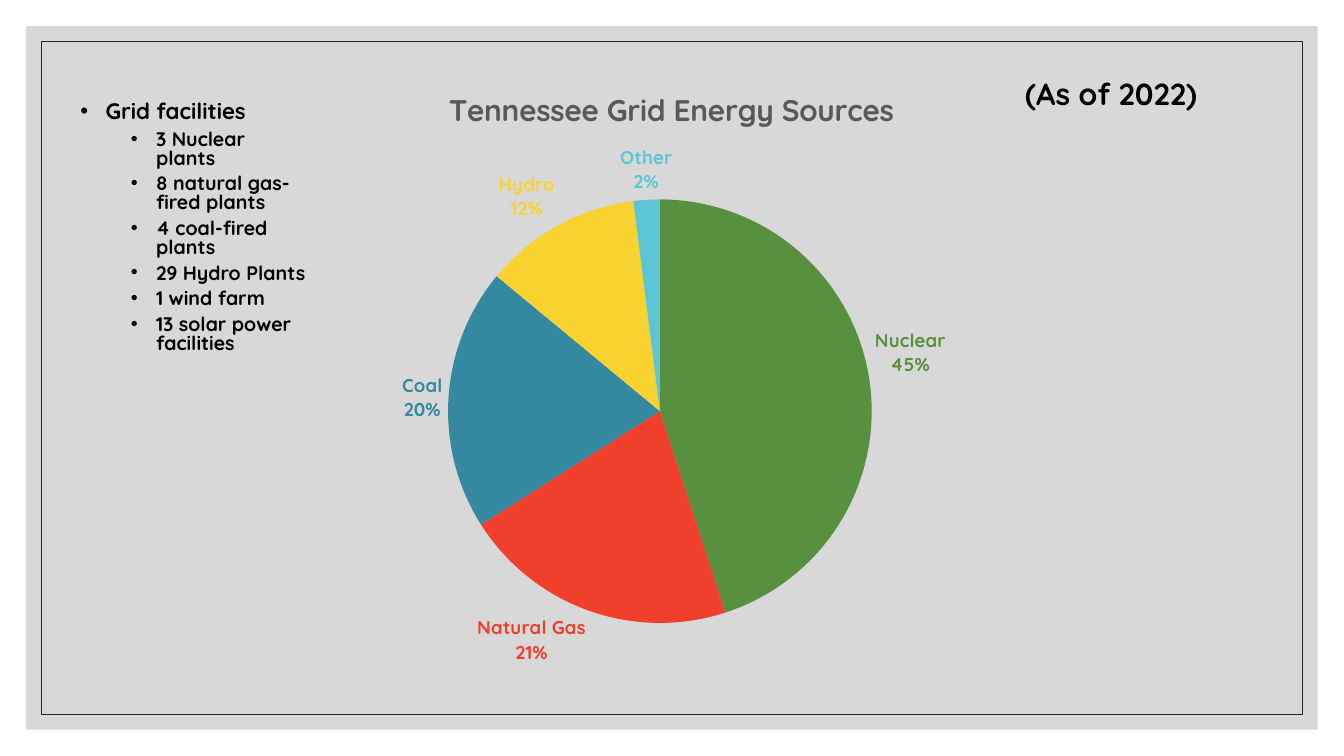
from dataclasses import dataclass

from lxml import etree
from pptx import Presentation
from pptx import util as u
from pptx.chart.data import CategoryChartData
from pptx.dml.color import RGBColor
from pptx.enum import chart as ch
from pptx.enum import shapes
from pptx.oxml import ns

FACE = "Quicksand"


@dataclass
class Source:
    name: str
    share: int
    color: str


@dataclass
class Line:
    text: str
    size: float
    level: int = 0
    left: float = 0
    hang: float = 0
    space: float = 0


SOURCES = [
    Source("Nuclear", 45, "57903F"),
    Source("Natural Gas", 21, "F03F2B"),
    Source("Coal", 20, "3488A0"),
    Source("Hydro", 12, "F8D22F"),
    Source("Other", 2, "5CC6D6"),
]
PLANTS = [
    "3 Nuclear plants",
    "8 natural gas-fired plants",
    "4 coal-fired plants",
    "29 Hydro Plants",
    "1 wind farm",
    "13 solar power facilities",
]


def rgb(code: str) -> RGBColor:
    return RGBColor.from_string(code)


def style(font, size: float, color: str = "000000") -> None:
    font.name, font.size, font.bold = FACE, u.Pt(size), True
    font.color.rgb = rgb(color)


def add(node, tag: str, **attrs: str):
    child = etree.SubElement(node, ns.qn(tag))
    for key, value in attrs.items():
        child.set(key, value)
    return child


def panel(slide, inset: float):
    """Add a bare rectangle inset equally from every slide edge."""
    box = slide.shapes.add_shape(
        shapes.MSO_SHAPE.RECTANGLE, u.Inches(inset), u.Inches(inset),
        u.Inches(13.33 - 2 * inset), u.Inches(7.5 - 2 * inset))
    box.shadow.inherit = False
    box.fill.background()
    box.line.fill.background()
    return box


def write(slide, at: tuple, lines: list[Line], pitch: float) -> None:
    frame = slide.shapes.add_textbox(*map(u.Inches, at)).text_frame
    frame.word_wrap = True
    for i, line in enumerate(lines):
        para = frame.paragraphs[0] if i == 0 else frame.add_paragraph()
        para.level, para.line_spacing = line.level, pitch
        if line.space:
            para.space_before = u.Pt(line.space)
        if line.hang:
            props = para._p.get_or_add_pPr()
            props.set("marL", str(u.Inches(line.left)))
            props.set("indent", str(-u.Inches(line.hang)))
            add(props, "a:buFont", typeface="Arial")
            add(props, "a:buChar", char="•")
        run = para.add_run()
        run.text = line.text
        style(run.font, line.size)


def place(node, index: int, **spots: float) -> None:
    """Give a chart part a manual layout, in fractions of the chart."""
    for old in node.findall(ns.qn("c:layout")):
        node.remove(old)
    layout = etree.Element(ns.qn("c:layout"))
    manual = add(layout, "c:manualLayout")
    if "w" in spots:
        add(manual, "c:layoutTarget", val="inner")
    add(manual, "c:xMode", val="edge")
    add(manual, "c:yMode", val="edge")
    for key, value in spots.items():
        add(manual, f"c:{key}", val=str(value))
    node.insert(index, layout)


def show(labels) -> None:
    """Show category and percent on two lines."""
    for tag, value in (("Val", "0"), ("CatName", "1"), ("Percent", "1")):
        labels.find(ns.qn(f"c:show{tag}")).set("val", value)
    mark = etree.Element(ns.qn("c:separator"))
    mark.text = "\n"
    last = labels.find(ns.qn("c:showBubbleSize"))
    if last is None:
        last = labels.find(ns.qn("c:showPercent"))
    last.addnext(mark)


def pie(slide) -> None:
    data = CategoryChartData()
    data.categories = [s.name for s in SOURCES]
    data.add_series("Series 1", [s.share for s in SOURCES])
    chart = slide.shapes.add_chart(
        ch.XL_CHART_TYPE.PIE, *map(u.Inches, (0.7, 0.7, 11.93, 6.09)), data).chart
    chart.has_legend = False
    chart.font.name, chart.font.size = FACE, u.Pt(10)
    chart.font.color.rgb = rgb("000000")

    title = chart.chart_title
    run = title.text_frame.paragraphs[0].add_run()
    run.text = "Tennessee Grid Energy Sources"
    style(run.font, 21.3, "595959")
    title.include_in_layout = False
    place(title._element, 1, x=0.31, y=0.02)
    area = chart._chartSpace.find(".//" + ns.qn("c:plotArea"))
    place(area, 0, x=0.31, y=0.21, w=0.36, h=0.69)

    plot = chart.plots[0]
    plot.vary_by_categories = True
    series = plot.series[0]
    labels = series.data_labels
    labels.number_format, labels.number_format_is_linked = "0%", False
    labels.position = ch.XL_LABEL_POSITION.OUTSIDE_END
    show(labels._element)
    for i, source in enumerate(SOURCES):
        point = series.points[i]
        point.format.fill.solid()
        point.format.fill.fore_color.rgb = rgb(source.color)
        point.format.line.fill.background()
        style(point.data_label.font, 13.3, source.color)
        point.data_label.position = ch.XL_LABEL_POSITION.OUTSIDE_END
    for label in labels._element.findall(ns.qn("c:dLbl")):
        show(label)


def main() -> None:
    deck = Presentation()
    deck.slide_width, deck.slide_height = u.Inches(13.33), u.Inches(7.5)
    slide = deck.slides.add_slide(deck.slide_layouts[6])

    back = panel(slide, 0.26)
    back.fill.solid()
    back.fill.fore_color.rgb = rgb("BFBFBF")
    tint = back._element.spPr.find(".//" + ns.qn("a:srgbClr"))
    add(tint, "a:alpha", val="60000")
    frame = panel(slide, 0.41)
    frame.line.color.rgb = rgb("262626")
    frame.line.width = u.Pt(0.5)

    pie(slide)
    plants = [Line(name, 14, 1, 0.75, 0.25, 5) for name in PLANTS]
    head = Line("Grid facilities", 16, left=0.25, hang=0.25)
    write(slide, (0.7, 0.97, 2.47, 2.69), [head, *plants], 0.8)
    write(slide, (10.07, 0.8, 2.01, 0.6), [Line("(As of 2022)", 21.7)], 0.7)
    deck.save("out.pptx")


if __name__ == "__main__":
    main()
